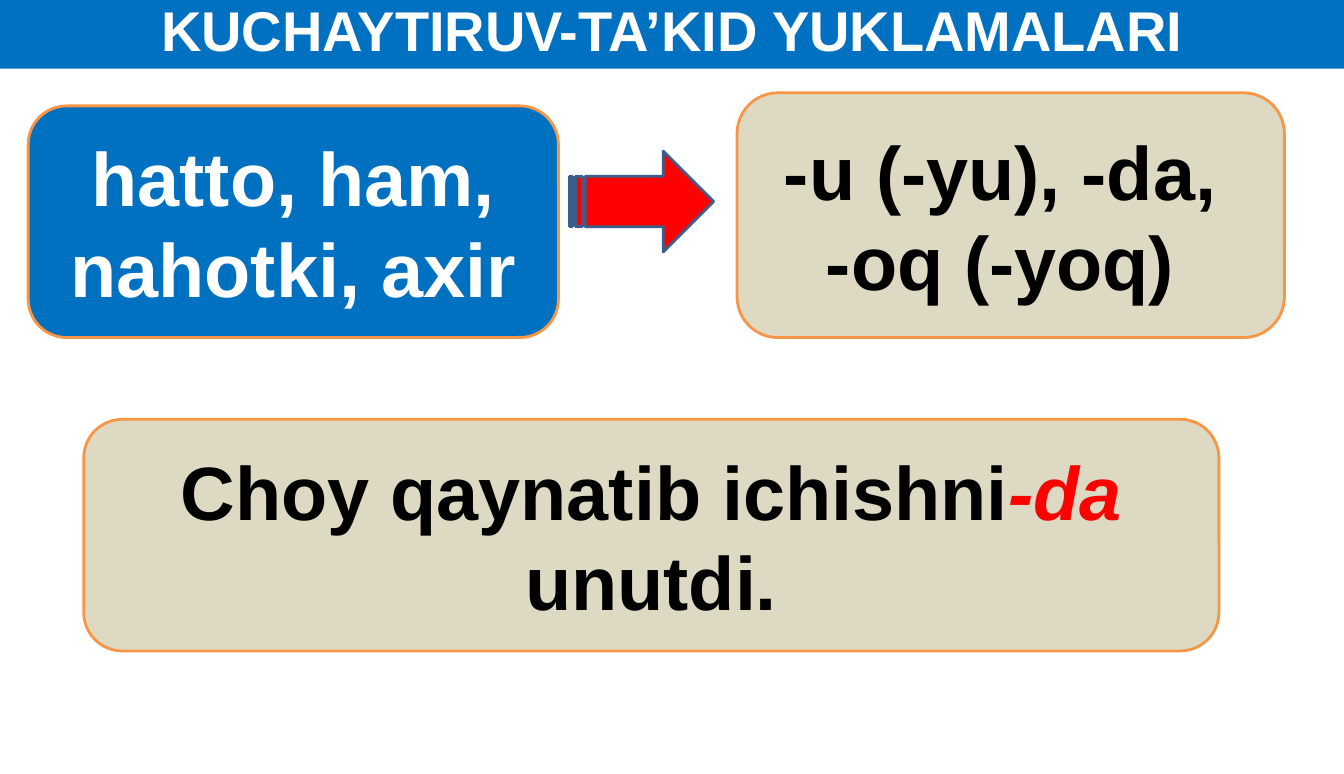
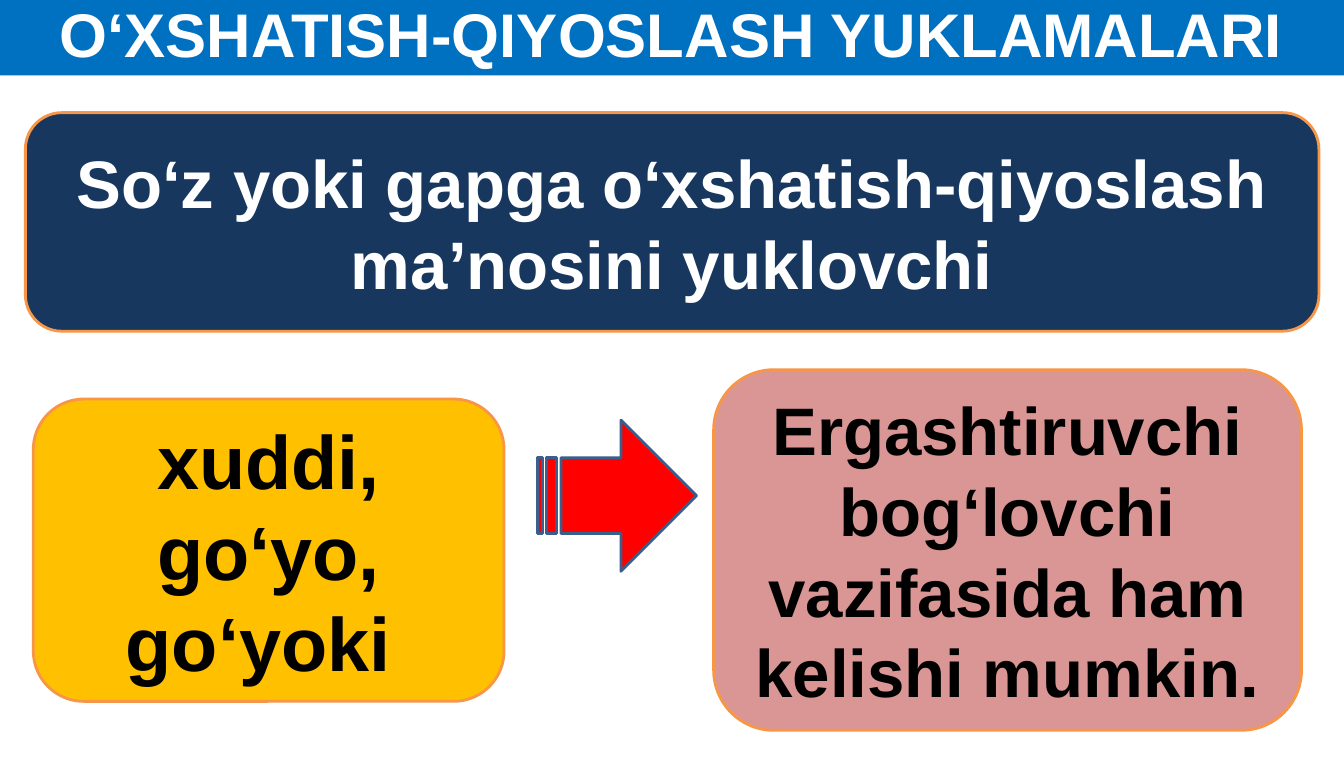
from dataclasses import dataclass

from pptx import Presentation
from pptx.dml.color import RGBColor
from pptx.enum.shapes import MSO_SHAPE
from pptx.enum.text import MSO_ANCHOR, MSO_AUTO_SIZE, PP_ALIGN
from pptx.shapes.autoshape import Shape
from pptx.slide import Slide
from pptx.text.text import _Paragraph as Paragraph
from pptx.util import Cm, Pt


@dataclass(frozen=True)
class Theme:
    font: str = "Arial"
    blue: str = "0070C0"
    navy: str = "17375E"
    sand: str = "DDD9C3"
    gold: str = "FFC000"
    rose: str = "D99694"
    red: str = "FF0000"
    white: str = "FFFFFF"
    black: str = "000000"
    card_border: str = "F79646"
    arrow_border: str = "3A5F8C"
    border_width: int = 2
    body_size: int = 48
    large_size: int = 54


THEME = Theme()
SLIDE_WIDTH = 33.86
SLIDE_HEIGHT = 19.51
BAND_TOP = -0.23


@dataclass(frozen=True)
class Area:
    left: float
    top: float
    width: float
    height: float


@dataclass(frozen=True)
class Span:
    text: str
    accent: bool = False


@dataclass(frozen=True)
class Card:
    area: Area
    fill: str
    color: str
    size: int
    paragraphs: tuple[tuple[Span, ...], ...]


@dataclass(frozen=True)
class Page:
    title: str
    title_size: int
    band_height: float
    arrow: Area
    cards: tuple[Card, ...]


PAGES = (
    Page(
        title="KUCHAYTIRUV-TA’KID YUKLAMALARI",
        title_size=40,
        band_height=1.96,
        arrow=Area(14.35, 3.81, 3.63, 2.54),
        cards=(
            Card(Area(18.57, 2.34, 13.79, 6.17), THEME.sand, THEME.black, THEME.large_size,
                 ((Span("-u (-yu), -da, "),), (Span("-oq (-yoq) "),))),
            Card(Area(0.71, 2.67, 13.36, 5.84), THEME.blue, THEME.white, THEME.large_size,
                 ((Span("hatto, ham, nahotki, axir"),),)),
            Card(Area(2.11, 10.57, 28.6, 5.84), THEME.sand, THEME.black, THEME.large_size,
                 ((Span("Choy qaynatib ichishni"), Span("-da ", accent=True), Span("unutdi.")),)),
        ),
    ),
    Page(
        title="O‘XSHATISH-QIYOSLASH YUKLAMALARI",
        title_size=44,
        band_height=2.13,
        arrow=Area(13.54, 10.59, 4.01, 3.81),
        cards=(
            Card(Area(17.98, 9.32, 14.81, 9.09), THEME.rose, THEME.black, THEME.body_size,
                 ((Span("Ergashtiruvchi bog‘lovchi vazifasida ham kelishi mumkin."),),)),
            Card(Area(0.64, 2.84, 32.59, 5.51), THEME.navy, THEME.white, THEME.body_size,
                 ((Span("So‘z yoki gapga o‘xshatish-qiyoslash ma’nosini yuklovchi"),),)),
            Card(Area(0.84, 10.06, 11.86, 7.62), THEME.gold, THEME.black, THEME.large_size,
                 ((Span("xuddi, go‘yo, go‘yoki "),),)),
        ),
    ),
)


def add_box(slide: Slide, preset: MSO_SHAPE, area: Area, fill: str, border: str | None = None) -> Shape:
    box = slide.shapes.add_shape(preset, Cm(area.left), Cm(area.top), Cm(area.width), Cm(area.height))
    box.shadow.inherit = False
    box.fill.solid()
    box.fill.fore_color.rgb = RGBColor.from_string(fill)
    if border is None:
        box.line.fill.background()
    else:
        box.line.color.rgb = RGBColor.from_string(border)
        box.line.width = Pt(THEME.border_width)
    return box


def write_spans(paragraph: Paragraph, spans: tuple[Span, ...], size: int, color: str) -> None:
    paragraph.alignment = PP_ALIGN.CENTER
    for span in spans:
        run = paragraph.add_run()
        run.text = span.text
        run.font.name = THEME.font
        run.font.size = Pt(size)
        run.font.bold = True
        run.font.italic = span.accent
        run.font.color.rgb = RGBColor.from_string(THEME.red if span.accent else color)


def add_title_band(slide: Slide, page: Page) -> None:
    area = Area(0, BAND_TOP, SLIDE_WIDTH, page.band_height)
    band = add_box(slide, MSO_SHAPE.RECTANGLE, area, THEME.blue)
    frame = band.text_frame
    frame.vertical_anchor = MSO_ANCHOR.TOP
    frame.auto_size = MSO_AUTO_SIZE.SHAPE_TO_FIT_TEXT
    write_spans(frame.paragraphs[0], (Span(page.title),), page.title_size, THEME.white)


def add_card(slide: Slide, card: Card) -> None:
    box = add_box(slide, MSO_SHAPE.ROUNDED_RECTANGLE, card.area, card.fill, THEME.card_border)
    frame = box.text_frame
    frame.word_wrap = True
    frame.vertical_anchor = MSO_ANCHOR.MIDDLE
    for index, spans in enumerate(card.paragraphs):
        paragraph = frame.add_paragraph() if index else frame.paragraphs[0]
        write_spans(paragraph, spans, card.size, card.color)


def main() -> None:
    deck = Presentation()
    deck.slide_width = Cm(SLIDE_WIDTH)
    deck.slide_height = Cm(SLIDE_HEIGHT)
    blank_layout = deck.slide_layouts[6]
    for page in PAGES:
        slide = deck.slides.add_slide(blank_layout)
        add_title_band(slide, page)
        add_box(slide, MSO_SHAPE.STRIPED_RIGHT_ARROW, page.arrow, THEME.red, THEME.arrow_border)
        for card in page.cards:
            add_card(slide, card)
    deck.save("out.pptx")


if __name__ == "__main__":
    main()
